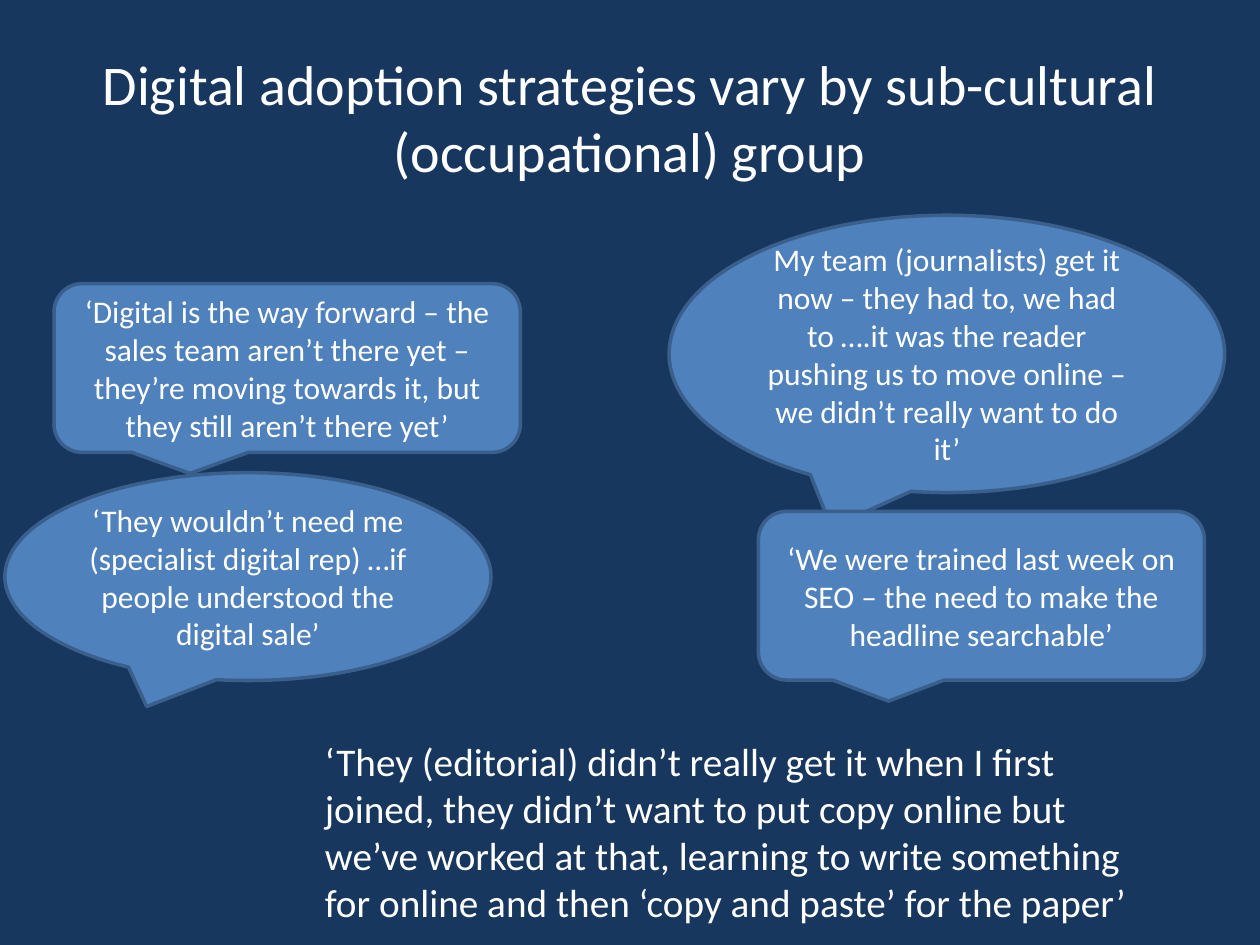
"""Build a slide of interview quotes on digital adoption by occupational group."""
from pptx import Presentation
from pptx.dml.color import RGBColor
from pptx.enum import shapes, text
from pptx.util import Cm, Pt

NAVY = RGBColor(0x17, 0x37, 0x5E)
BLUE = RGBColor(0x4F, 0x81, 0xBD)
OUTLINE = RGBColor(0x3A, 0x5F, 0x8C)
WHITE = RGBColor(0xFF, 0xFF, 0xFF)
FONT = "Calibri"
ELLIPSE = shapes.MSO_SHAPE.OVAL_CALLOUT
ROUNDED = shapes.MSO_SHAPE.ROUNDED_RECTANGULAR_CALLOUT

TITLE = "Digital adoption strategies vary by sub-cultural (occupational) group"
EDITORIAL_QUOTE = (
    "‘They (editorial) didn’t really get it when I first joined, they didn’t want "
    "to put copy online but we’ve worked at that, learning to write something for "
    "online and then ‘copy and paste’ for the paper’"
)
CALLOUTS = [
    (ELLIPSE, (13.49, 4.34, 11.2, 5.59),
     "My team (journalists) get it now – they had to, we had to ….it was the "
     "reader pushing us to move online – we didn’t really want to do it’"),
    (ROUNDED, (1.09, 5.72, 9.4, 3.4),
     "‘Digital is the way forward – the sales team aren’t there yet – they’re "
     "moving towards it, but they still aren’t there yet’"),
    (ELLIPSE, (0.1, 9.53, 9.8, 4.19),
     "‘They wouldn’t need me (specialist digital rep) …if people understood the "
     "digital sale’"),
    (ROUNDED, (15.29, 10.31, 8.99, 3.4),
     "‘We were trained last week on SEO – the need to make the headline searchable’"),
]


def write_text(shape, wording, size, alignment, anchor):
    frame = shape.text_frame
    frame.word_wrap = True
    frame.vertical_anchor = anchor
    frame.text = wording
    paragraph = frame.paragraphs[0]
    paragraph.alignment = alignment
    font = paragraph.runs[0].font
    font.name = FONT
    font.size = Pt(size)
    font.color.rgb = WHITE


def add_text(slide, box, wording, size, alignment, anchor):
    shape = slide.shapes.add_textbox(*map(Cm, box))
    write_text(shape, wording, size, alignment, anchor)


def add_callout(slide, kind, box, wording):
    shape = slide.shapes.add_shape(kind, *map(Cm, box))
    shape.shadow.inherit = False
    shape.fill.solid()
    shape.fill.fore_color.rgb = BLUE
    shape.line.color.rgb = OUTLINE
    shape.line.width = Pt(2)
    write_text(shape, wording, 18, text.PP_ALIGN.CENTER, text.MSO_ANCHOR.MIDDLE)


def main():
    presentation = Presentation()
    presentation.slide_width = Cm(25.4)
    presentation.slide_height = Cm(19.05)
    slide = presentation.slides.add_slide(presentation.slide_layouts[6])
    slide.background.fill.solid()
    slide.background.fill.fore_color.rgb = NAVY

    add_text(slide, (1.27, 0.76, 22.86, 3.18), TITLE, 32,
             text.PP_ALIGN.CENTER, text.MSO_ANCHOR.MIDDLE)
    add_text(slide, (6.3, 14.73, 16.99, 3.81), EDITORIAL_QUOTE, 22.4,
             text.PP_ALIGN.LEFT, text.MSO_ANCHOR.TOP)
    for kind, box, wording in CALLOUTS:
        add_callout(slide, kind, box, wording)

    presentation.save("out.pptx")


if __name__ == "__main__":
    main()
